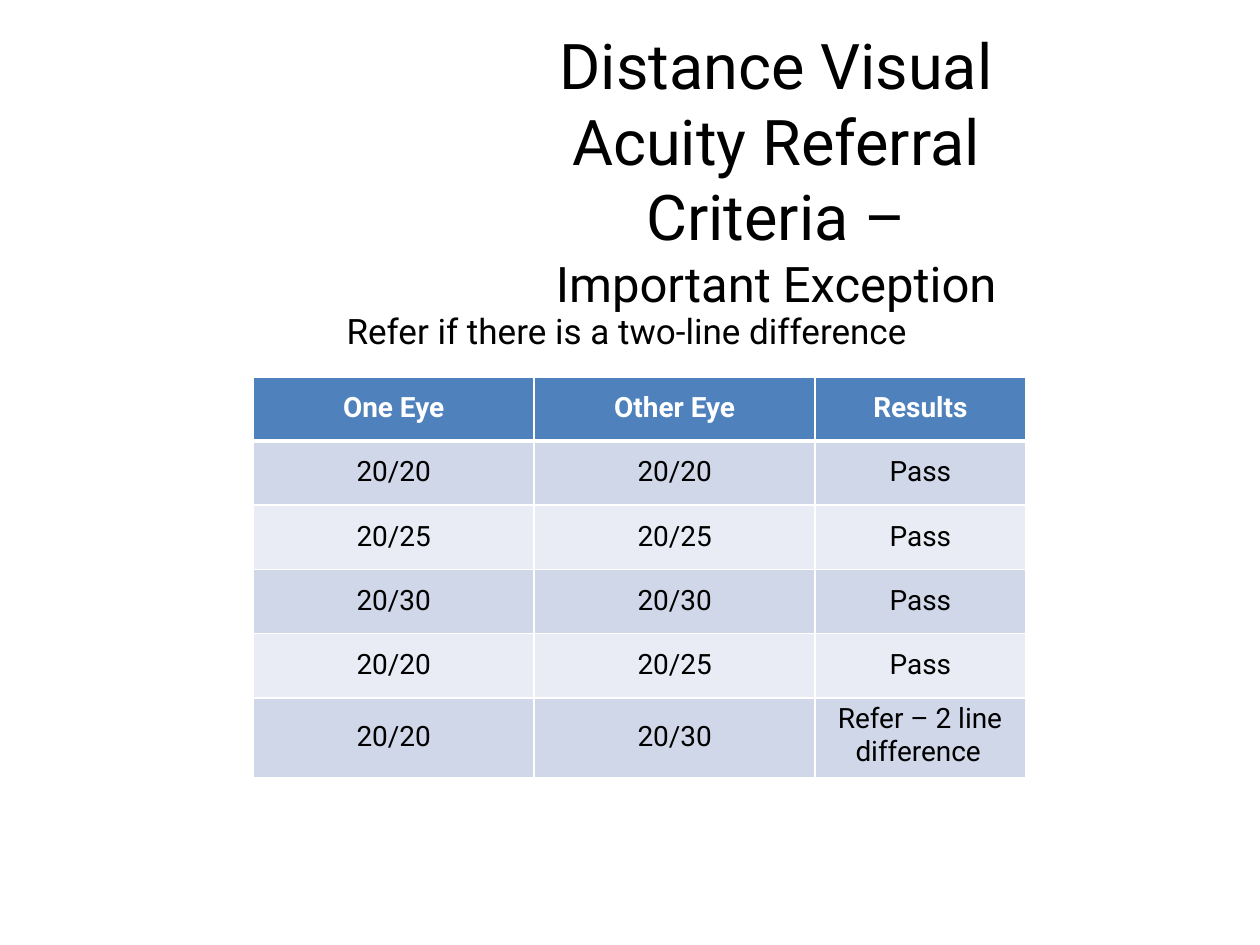
import pptx
import pptx.dml.color
import pptx.enum.text
import pptx.oxml
import pptx.oxml.ns
import pptx.util

FONT = "Roboto"
BLACK, WHITE = "000000", "FFFFFF"
HEADER_FILL = "4F81BC"
BAND_FILLS = ("D0D7E8", "E9ECF4")
CENTER = pptx.enum.text.PP_ALIGN.CENTER
LEFT = pptx.enum.text.PP_ALIGN.LEFT

# The page is a grid of 100 columns by 75 rows
CELL = pptx.util.Inches(0.1)

ROWS = [
    ("One Eye", "Other Eye", "Results"),
    ("20/20", "20/20", "Pass"),
    ("20/25", "20/25", "Pass"),
    ("20/30", "20/30", "Pass"),
    ("20/20", "20/25", "Pass"),
    ("20/20", "20/30", "Refer – 2 line difference"),
]
COLUMN_WIDTHS = (22.3, 22.3, 16.7)
ROW_HEIGHTS = (5.1, 5.1, 5.1, 5.1, 5.1, 6.3)


def grid(cells):
    return round(cells * CELL)


def color(value):
    return pptx.dml.color.RGBColor.from_string(value)


def add_span(para, text, size, value=BLACK, bold=False):
    span = para.add_run()
    span.text = text
    span.font.name = FONT
    span.font.size = pptx.util.Pt(size)
    span.font.bold = bold
    span.font.color.rgb = color(value)


def set_frame(frame):
    frame.word_wrap = True
    frame.auto_size = pptx.enum.text.MSO_AUTO_SIZE.NONE
    frame.vertical_anchor = pptx.enum.text.MSO_ANCHOR.TOP
    frame.margin_left = frame.margin_right = frame.margin_bottom = 0
    frame.margin_top = grid(0.1)


def set_borders(cell, widths):
    """Draw white borders; widths gives the points for each side."""
    properties = cell._tc.get_or_add_tcPr()
    for index, side in enumerate("LRTB"):
        properties.insert(index, pptx.oxml.parse_xml(
            f'<a:ln{side} {pptx.oxml.ns.nsdecls("a")} w="{pptx.util.Pt(widths[side])}">'
            f'<a:solidFill><a:srgbClr val="{WHITE}"/></a:solidFill></a:ln{side}>'))


# Title with a smaller second line
def build_title(page, left, top, width, height):
    title = page.shapes.title
    title.left, title.top, title.width, title.height = map(grid, (left, top, width, height))
    frame = title.text_frame
    set_frame(frame)
    lines = (("Distance Visual Acuity Referral Criteria –", 36), ("Important Exception", 28))
    for index, (text, size) in enumerate(lines):
        para = frame.add_paragraph() if index else frame.paragraphs[0]
        para.alignment = CENTER
        para.space_before = pptx.util.Pt(0)
        add_span(para, text, size)


# Rule stated above the table
def build_rule(page, left, top, width, height):
    box = page.shapes.add_textbox(*map(grid, (left, top, width, height)))
    set_frame(box.text_frame)
    add_span(box.text_frame.paragraphs[0], "Refer if there is a two-line difference", 20)


def fill_cell(cell, text, row, last):
    header = row == 0
    cell.fill.solid()
    cell.fill.fore_color.rgb = color(HEADER_FILL if header else BAND_FILLS[(row - 1) % 2])
    set_borders(cell, {"L": 1, "R": 1, "T": 3 if row == 1 else 1, "B": 3 if header else 1})
    cell.margin_left = cell.margin_right = cell.margin_bottom = 0
    cell.margin_top = grid(1.8 if last else 1.2)
    para = cell.text_frame.paragraphs[0]
    para.alignment = CENTER
    if text.startswith("Refer"):
        # Two lines with a hanging indent
        cell.margin_top = grid(0.4)
        para.alignment = LEFT
        properties = para._p.get_or_add_pPr()
        properties.set("marL", str(grid(3.2)))
        properties.set("indent", str(grid(-1.4)))
    add_span(para, text, 16, WHITE if header else BLACK, header)


# Table of results for each pair of eyes
def build_results(page, left, top):
    box = map(grid, (left, top, sum(COLUMN_WIDTHS), sum(ROW_HEIGHTS)))
    table = page.shapes.add_table(len(ROWS), len(COLUMN_WIDTHS), *box).table
    for column, width in zip(table.columns, COLUMN_WIDTHS):
        column.width = grid(width)
    for row, (texts, height) in enumerate(zip(ROWS, ROW_HEIGHTS)):
        table.rows[row].height = grid(height)
        for column, text in enumerate(texts):
            fill_cell(table.cell(row, column), text, row, row == len(ROWS) - 1)


def main():
    deck = pptx.Presentation()
    deck.slide_width, deck.slide_height = grid(100), grid(75)
    page = deck.slides.add_slide(deck.slide_layouts.get_by_name("Title Only"))
    build_title(page, 37, 2, 49.2, 17)
    build_results(page, 20.1, 29.9)
    build_rule(page, 27.5, 24.5, 47.1, 3.6)
    deck.save("out.pptx")


if __name__ == "__main__":
    main()
